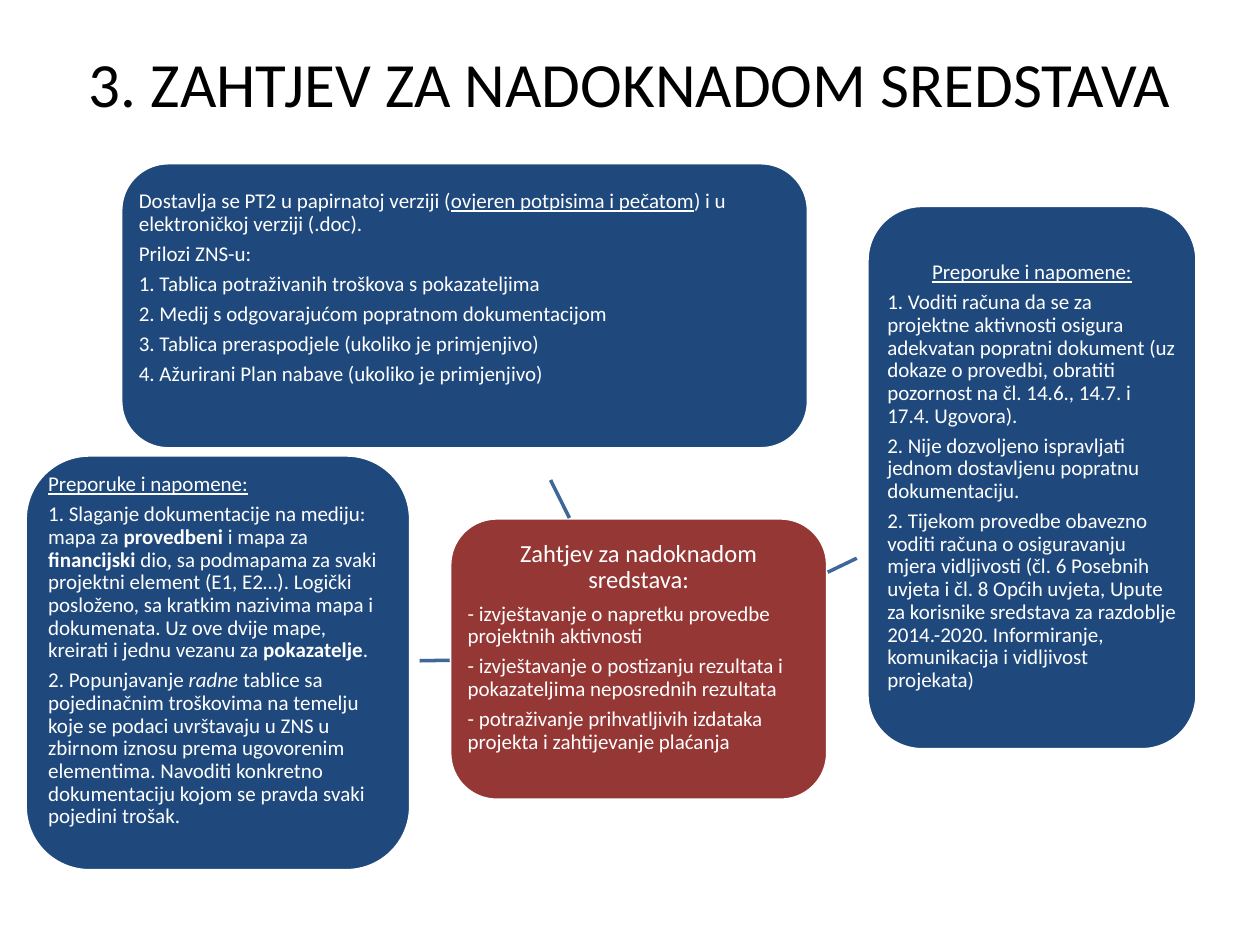
from lxml import etree
from pptx import Presentation
from pptx.dml.color import RGBColor
from pptx.enum.shapes import MSO_CONNECTOR, MSO_SHAPE
from pptx.enum.text import MSO_ANCHOR, PP_ALIGN
from pptx.oxml.ns import qn
from pptx.util import Pt

ROUNDED = MSO_SHAPE.ROUNDED_RECTANGLE
STRAIGHT = MSO_CONNECTOR.STRAIGHT
TOP = MSO_ANCHOR.TOP
LEFT, CENTER = PP_ALIGN.LEFT, PP_ALIGN.CENTER

FONT = "Calibri"
COLORS = {
    "blue": "1F497D",
    "red": "953735",
    "link": "3F6797",
    "white": "FFFFFF",
    "black": "000000",
}

TITLE = "3. ZAHTJEV ZA NADOKNADOM SREDSTAVA"

# A paragraph is (alignment, size, spans); a span is text or (text, style).
REQUEST = [
    (CENTER, 14, ["Zahtjev za nadoknadom sredstava:"]),
    (LEFT, 12, ["- izvještavanje o napretku provedbe projektnih aktivnosti"]),
    (LEFT, 12, ["- izvještavanje o postizanju rezultata i pokazateljima "
                "neposrednih rezultata"]),
    (LEFT, 12, ["- potraživanje prihvatljivih izdataka projekta i "
                "zahtijevanje plaćanja"]),
]
SUBMISSION = [
    (LEFT, 12, ["Dostavlja se PT2 u papirnatoj verziji (",
                ("ovjeren potpisima i pečatom", "underline"),
                ") i u elektroničkoj verziji (.doc)."]),
    (LEFT, 12, ["Prilozi ZNS-u:"]),
    (LEFT, 12, ["1. Tablica potraživanih troškova s pokazateljima"]),
    (LEFT, 12, ["2. Medij s odgovarajućom popratnom dokumentacijom"]),
    (LEFT, 12, ["3. Tablica preraspodjele (ukoliko je primjenjivo)"]),
    (LEFT, 12, ["4. Ažurirani Plan nabave (ukoliko je primjenjivo)"]),
]
VISIBILITY = [
    (CENTER, 12, [("Preporuke i napomene:", "underline")]),
    (LEFT, 12, ["1. Voditi računa da se za projektne aktivnosti osigura "
                "adekvatan popratni dokument (uz dokaze o provedbi, obratiti "
                "pozornost na čl. 14.6., 14.7. i 17.4. Ugovora)."]),
    (LEFT, 12, ["2. Nije dozvoljeno ispravljati jednom dostavljenu popratnu "
                "dokumentaciju."]),
    (LEFT, 12, ["2. Tijekom provedbe obavezno voditi računa o osiguravanju "
                "mjera vidljivosti (čl. 6 Posebnih uvjeta i čl. 8 Općih "
                "uvjeta, Upute za korisnike sredstava za razdoblje "
                "2014.-2020. Informiranje, komunikacija i vidljivost "
                "projekata)"]),
]
DOCUMENTS = [
    (LEFT, 12, [("Preporuke i napomene:", "underline")]),
    (LEFT, 12, ["1. Slaganje dokumentacije na mediju: mapa za ",
                ("provedbeni", "bold"), " i mapa za ",
                ("financijski ", "bold"),
                "dio, sa podmapama za svaki projektni element (E1, E2…). "
                "Logički posloženo, sa kratkim nazivima mapa i dokumenata. "
                "Uz ove dvije mape, kreirati i jednu vezanu za ",
                ("pokazatelje", "bold"), "."]),
    (LEFT, 12, ["2. Popunjavanje ", ("radne ", "italic"),
                "tablice sa pojedinačnim troškovima na temelju koje se podaci "
                "uvrštavaju u ZNS u zbirnom iznosu prema ugovorenim "
                "elementima. Navoditi konkretno dokumentaciju kojom se pravda "
                "svaki pojedini trošak."]),
]

# left, top, width, height; fill; inset above the text; paragraphs
BOXES = [
    ((257, 296, 216, 161.3), "red", 5.5, REQUEST),
    ((69, 93, 393, 163.5), "blue", 8, SUBMISSION),
    ((495.4, 117.4, 188.6, 311), "blue", 23, VISIBILITY),
    ((14.4, 260, 220.3, 237.6), "blue", 0, DOCUMENTS),
]
SIDE_INSET = 2.4

LINKS = [
    (325.4, 296, 314.6, 274.3),
    (473, 327, 489.6, 319),
    (257, 377.3, 239.8, 377.6),
]


def rgb(name):
    return RGBColor.from_string(COLORS[name])


def format_font(font, size, color):
    font.name, font.size = FONT, Pt(size)
    font.color.rgb = rgb(color)


def write_paragraphs(frame, paragraphs):
    for index, (alignment, size, spans) in enumerate(paragraphs):
        para = frame.add_paragraph() if index else frame.paragraphs[0]
        para.alignment = alignment
        para.line_spacing = 0.9
        para.space_after = Pt(0.35 * size)
        format_font(para.font, size, "white")
        for item in spans:
            text, style = (item, None) if isinstance(item, str) else item
            span = para.add_run()
            span.text = text
            if style:
                setattr(span.font, style, True)


def add_box(page, place, fill, inset, paragraphs):
    box = page.shapes.add_shape(ROUNDED, *map(Pt, place))
    box.shadow.inherit = False
    box.fill.solid()
    box.fill.fore_color.rgb = rgb(fill)
    box.line.color.rgb = rgb("white")
    box.line.width = Pt(2)
    frame = box.text_frame
    frame.word_wrap = True
    frame.vertical_anchor = TOP
    frame.margin_left = frame.margin_right = Pt(SIDE_INSET)
    frame.margin_top, frame.margin_bottom = Pt(inset), Pt(0)
    write_paragraphs(frame, paragraphs)


def add_link(page, ends):
    link = page.shapes.add_connector(STRAIGHT, *map(Pt, ends))
    link.line.color.rgb = rgb("link")
    link.line.width = Pt(2)
    etree.SubElement(link._element.spPr, qn("a:effectLst"))


def add_title(page):
    title = page.shapes.title
    title.left, title.top, title.width, title.height = map(
        Pt, (36, 21.6, 648, 90))
    frame = title.text_frame
    frame.text = TITLE
    frame.word_wrap = True
    frame.vertical_anchor = TOP
    para = frame.paragraphs[0]
    para.alignment = CENTER
    format_font(para.font, 36, "black")


def main():
    deck = Presentation()
    deck.slide_width, deck.slide_height = Pt(720), Pt(540)
    page = deck.slides.add_slide(deck.slide_layouts[5])
    add_title(page)
    for box in BOXES:
        add_box(page, *box)
    for ends in LINKS:
        add_link(page, ends)
    deck.save("out.pptx")


if __name__ == "__main__":
    main()
